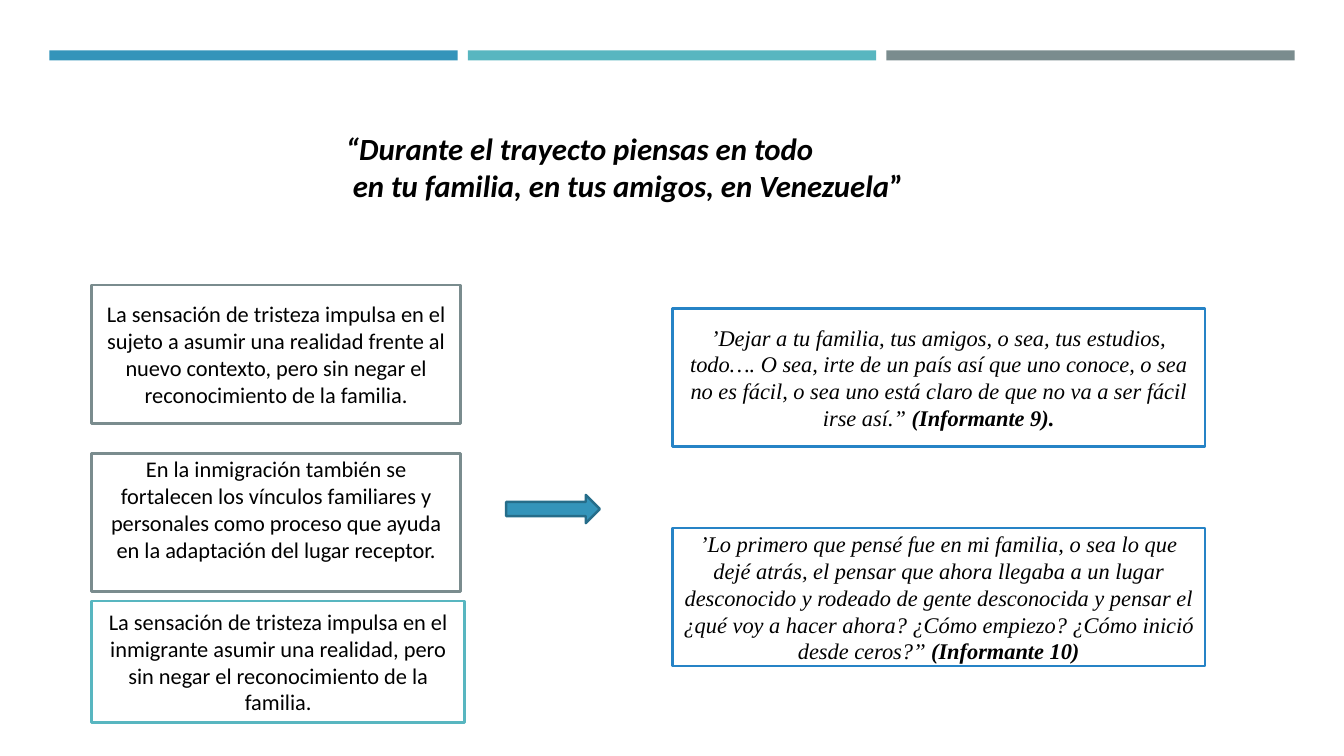
from pptx import Presentation
from pptx.dml.color import RGBColor
from pptx.enum.shapes import MSO_SHAPE as Shape
from pptx.enum.text import MSO_ANCHOR as Anchor, MSO_AUTO_SIZE as AutoSize, PP_ALIGN as Align
from pptx.util import Inches, Pt

BLACK = RGBColor(0x00, 0x00, 0x00)
WHITE = RGBColor(0xFF, 0xFF, 0xFF)
BLUE = RGBColor(0x34, 0x94, 0xBA)
DARK_BLUE = RGBColor(0x26, 0x6D, 0x8A)
QUOTE_BLUE = RGBColor(0x26, 0x83, 0xC6)
TEAL = RGBColor(0x58, 0xB6, 0xC0)
GRAY = RGBColor(0x7A, 0x8C, 0x8E)


def write(para, text, font="Calibri", size=16, bold=False, italic=False):
    """Add a formatted span of text to a paragraph."""
    span = para.add_run()
    span.text = text
    span.font.name = font
    span.font.size = Pt(size)
    span.font.bold = bold
    span.font.italic = italic
    span.font.color.rgb = BLACK


class Slide:
    """Hold the current page and the style of its elements."""

    line_width = Pt(1.75)
    quote_font = "Times New Roman"

    def __init__(self, deck):
        """Add a page with a title to the deck."""
        self.page = deck.slides.add_slide(deck.slide_layouts[5])

    def shape(self, kind, left, top, width, height, fill, line=None):
        """Draw a flat preset shape, outlined if a line colour is given."""
        shape = self.page.shapes.add_shape(
            kind, Inches(left), Inches(top), Inches(width), Inches(height))
        shape.shadow.inherit = False
        shape.fill.solid()
        shape.fill.fore_color.rgb = fill
        if line is None:
            shape.line.fill.background()
        else:
            shape.line.color.rgb = line
            shape.line.width = self.line_width
        return shape

    def box(self, left, top, width, height, line):
        """Draw a white outlined box and return its text frame."""
        frame = self.shape(Shape.RECTANGLE, left, top, width, height, WHITE, line).text_frame
        frame.word_wrap = True
        frame.vertical_anchor = Anchor.MIDDLE
        frame.paragraphs[0].alignment = Align.CENTER
        return frame

    def idea(self, text, top, line, width=3.66, height=1.37):
        """Add an interpretation box in the left column."""
        frame = self.box(0.91, top, width, height, line)
        write(frame.paragraphs[0], text)
        return frame

    def quote(self, text, speaker, top):
        """Add an informant's quotation in the right column."""
        para = self.box(6.67, top, 5.28, 1.37, QUOTE_BLUE).paragraphs[0]
        write(para, text, font=self.quote_font, italic=True)
        write(para, f" ({speaker}", font=self.quote_font, bold=True, italic=True)

    def title(self, lines, closing):
        """Fill the title with lines and an upright closing mark."""
        title = self.page.shapes.title
        title.left, title.top = Inches(3.33), Inches(1.24)
        title.width, title.height = Inches(6.67), Inches(0.84)
        frame = title.text_frame
        frame.word_wrap = True
        frame.auto_size = AutoSize.NONE
        frame.vertical_anchor = Anchor.TOP
        para = frame.paragraphs[0]
        para.alignment = Align.LEFT
        for index, line in enumerate(lines):
            if index:
                para.add_line_break()
            write(para, line, size=22, bold=True, italic=True)
        write(para, closing, size=22, bold=True)


def main():
    """Build and save the slide."""
    deck = Presentation()
    deck.slide_width, deck.slide_height = Inches(13.33), Inches(7.5)
    slide = Slide(deck)

    for index, colour in enumerate((BLUE, TEAL, GRAY)):
        slide.shape(Shape.RECTANGLE, 0.49 + index * 4.15, 0.5, 4.05, 0.1, colour)

    slide.title(("“Durante el trayecto piensas en todo",
                 " en tu familia, en tus amigos, en Venezuela"), "”")

    slide.idea("La sensación de tristeza impulsa en el sujeto a asumir una realidad frente al "
               "nuevo contexto, pero sin negar el reconocimiento de la familia.", 2.83, GRAY)
    bonds = slide.idea("En la inmigración también se fortalecen los vínculos familiares y "
                       "personales como proceso que ayuda en la adaptación del lugar receptor.",
                       4.5, GRAY)
    bonds.margin_top, bonds.margin_bottom = Inches(0), Inches(0.27)
    slide.idea("La sensación de tristeza impulsa en el inmigrante asumir una realidad, pero "
               "sin negar el reconocimiento de la familia.", 5.96, TEAL, width=3.7, height=1.21)

    slide.shape(Shape.RIGHT_ARROW, 5.02, 4.91, 0.93, 0.28, BLUE, DARK_BLUE)

    slide.quote("’Dejar a tu familia, tus amigos, o sea, tus estudios, todo…. O sea, irte de un "
                "país así que uno conoce, o sea no es fácil, o sea uno está claro de que no va "
                "a ser fácil irse así.”", "Informante 9).", 3.06)
    slide.quote("’Lo primero que pensé fue en mi familia, o sea lo que dejé atrás, el pensar que "
                "ahora llegaba a un lugar desconocido y rodeado de gente desconocida y pensar el "
                "¿qué voy a hacer ahora? ¿Cómo empiezo? ¿Cómo inició desde ceros?’’",
                "Informante 10)", 5.24)

    deck.save("out.pptx")


if __name__ == "__main__":
    main()
